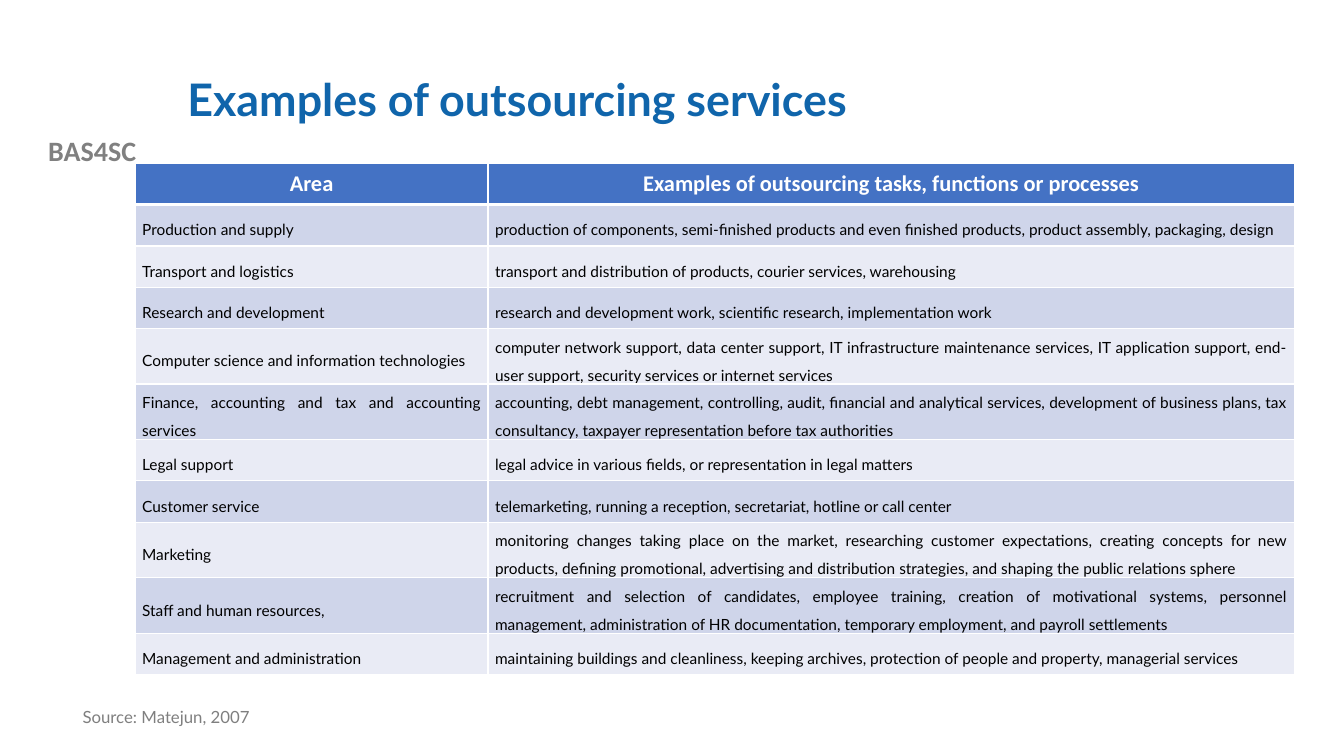
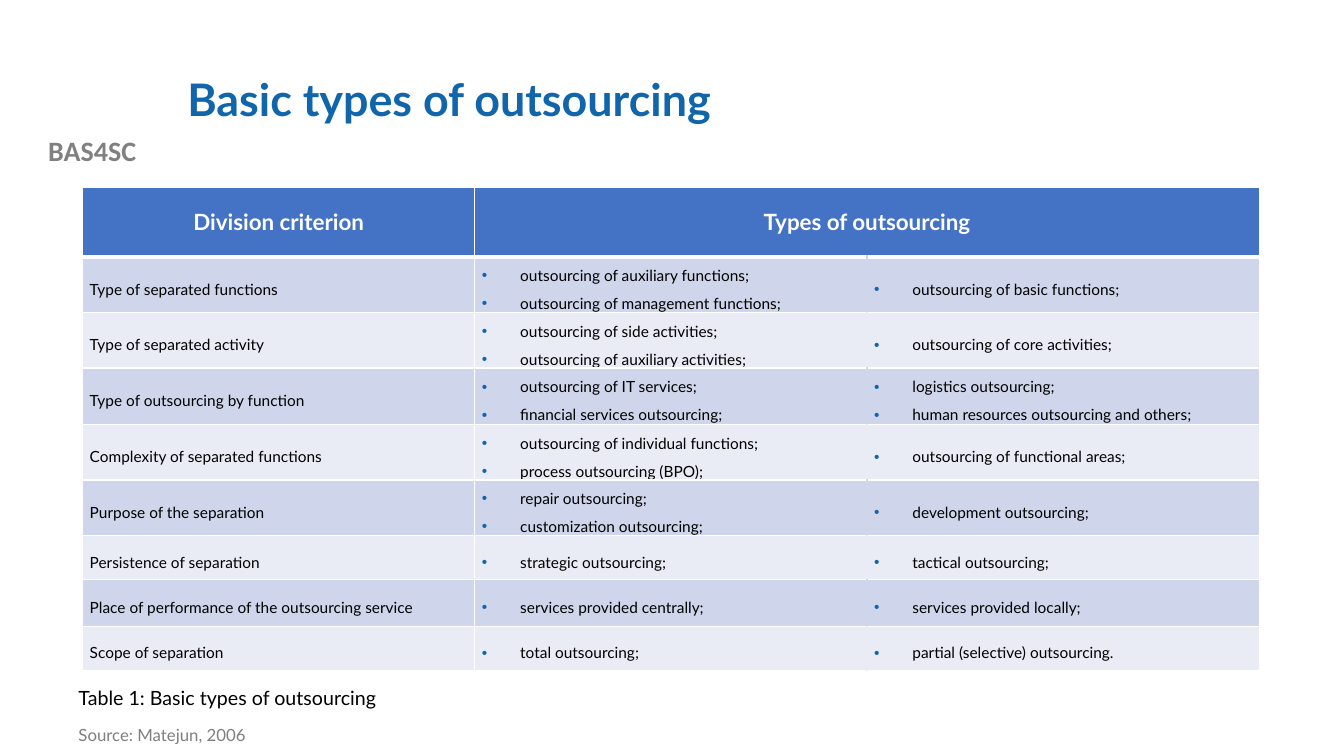
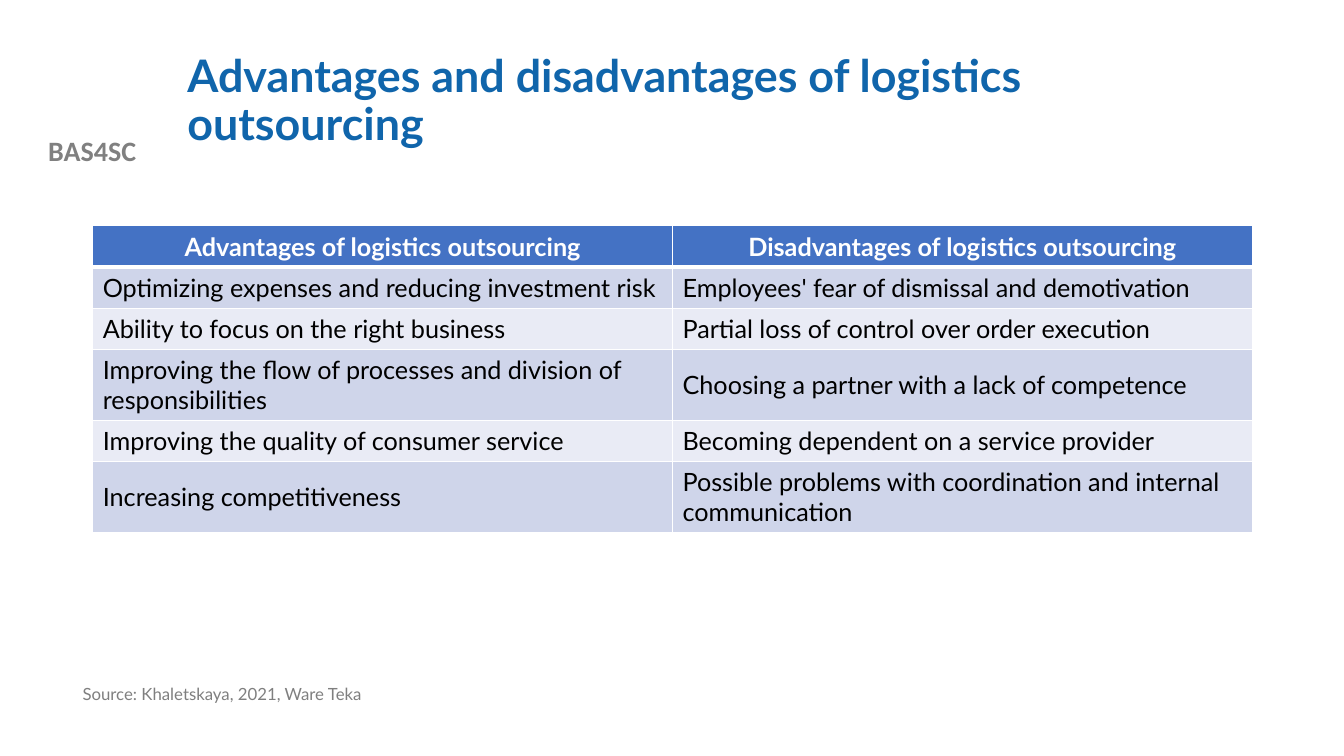
from lxml.etree import SubElement
from pptx import Presentation
from pptx.dml.color import RGBColor
from pptx.enum.text import MSO_ANCHOR, PP_ALIGN
from pptx.oxml.ns import qn
from pptx.util import Inches, Pt

COLORS = {
    "title": "1065AB",
    "label": "808080",
    "source": "7F7F7F",
    "header": "4472C4",
    "odd_row": "CFD5EA",
    "even_row": "E9EBF5",
    "white": "FFFFFF",
    "black": "000000",
}
FONT = "Lato"
LABEL_FONT = "Calibri"
BULLET_INDENT = Inches(0.38)

SERVICES = [
    ["Area", "Examples of outsourcing tasks, functions or processes"],
    ["Production and supply",
     "production of components, semi-finished products and even finished products, product assembly, "
     "packaging, design"],
    ["Transport and logistics", "transport and distribution of products, courier services, warehousing"],
    ["Research and development", "research and development work, scientific research, implementation work"],
    ["Computer science and information technologies",
     "computer network support, data center support, IT infrastructure maintenance services, "
     "IT application support, end-user support, security services or internet services"],
    ["Finance, accounting and tax and accounting services",
     "accounting, debt management, controlling, audit, financial and analytical services, development of "
     "business plans, tax consultancy, taxpayer representation before tax authorities"],
    ["Legal support", "legal advice in various fields, or representation in legal matters"],
    ["Customer service", "telemarketing, running a reception, secretariat, hotline or call center"],
    ["Marketing",
     "monitoring changes taking place on the market, researching customer expectations, creating concepts "
     "for new products, defining promotional, advertising and distribution strategies, and shaping the "
     "public relations sphere"],
    ["Staff and human resources,",
     "recruitment and selection of candidates, employee training, creation of motivational systems, "
     "personnel management, administration of HR documentation, temporary employment, and payroll settlements"],
    ["Management and administration",
     "maintaining buildings and cleanliness, keeping archives, protection of people and property, "
     "managerial services"],
]

TYPES = [
    ["Division criterion", "Types of outsourcing", ""],
    ["Type of separated functions",
     "outsourcing of auxiliary functions;\noutsourcing of management functions;",
     "outsourcing of basic functions;"],
    ["Type of separated activity",
     "outsourcing of side activities;\noutsourcing of auxiliary activities;",
     "outsourcing of core activities;"],
    ["Type of outsourcing by function",
     "outsourcing of IT services;\nfinancial services outsourcing;",
     "logistics outsourcing;\nhuman resources outsourcing and others;"],
    ["Complexity of separated functions",
     "outsourcing of individual functions;\nprocess outsourcing (BPO);",
     "outsourcing of functional areas;"],
    ["Purpose of the separation",
     "repair outsourcing;\ncustomization outsourcing;",
     "development outsourcing;"],
    ["Persistence of separation", "strategic outsourcing;", "tactical outsourcing;"],
    ["Place of performance of the outsourcing service",
     "services provided centrally;", "services provided locally;"],
    ["Scope of separation", "total outsourcing;", "partial (selective) outsourcing."],
]

ADVANTAGES = [
    ["Advantages of logistics outsourcing", "Disadvantages of logistics outsourcing"],
    ["Optimizing expenses and reducing investment risk", "Employees' fear of dismissal and demotivation"],
    ["Ability to focus on the right business", "Partial loss of control over order execution"],
    ["Improving the flow of processes and division of responsibilities",
     "Choosing a partner with a lack of competence"],
    ["Improving the quality of consumer service", "Becoming dependent on a service provider"],
    ["Increasing competitiveness", "Possible problems with coordination and internal communication"],
]


def add_run(paragraph, text, size, color, font=FONT, bold=False):
    run = paragraph.add_run()
    run.text = text
    run.font.size = Pt(size)
    run.font.name = font
    run.font.bold = bold
    run.font.color.rgb = RGBColor.from_string(COLORS[color])


def add_text(slide, box, text, size, color, font=FONT, bold=False,
             align=PP_ALIGN.LEFT, anchor=MSO_ANCHOR.TOP, spacing=None):
    shape = slide.shapes.add_textbox(*map(Inches, box))
    frame = shape.text_frame
    frame.word_wrap = True
    frame.vertical_anchor = anchor
    paragraph = frame.paragraphs[0]
    paragraph.alignment = align
    paragraph.line_spacing = spacing
    add_run(paragraph, text, size, color, font, bold)


def add_slide(presentation, title, source, source_box):
    slide = presentation.slides.add_slide(presentation.slide_layouts[6])
    add_text(slide, (0, 1.28, 1.83, 0.44), "BAS4SC", 20, "label", LABEL_FONT, True, PP_ALIGN.CENTER)
    add_text(slide, (1.76, 0.4, 10.66, 1.22), title, 32, "title", bold=True,
             anchor=MSO_ANCHOR.MIDDLE, spacing=0.9)
    add_text(slide, source_box, source, 12, "source", spacing=0.9)
    return slide


def set_borders(cell, borders):
    properties = cell._tc.get_or_add_tcPr()
    for side in "LRTB":
        color, width = borders.get(side, ("white", 1))
        line = SubElement(properties, qn("a:ln" + side), w=str(Pt(width)))
        fill = SubElement(line, qn("a:solidFill"))
        SubElement(fill, qn("a:srgbClr"), val=COLORS[color])


def add_bullet(paragraph):
    properties = paragraph._p.get_or_add_pPr()
    properties.set("marL", str(BULLET_INDENT))
    properties.set("indent", str(-BULLET_INDENT))
    color = SubElement(properties, qn("a:buClr"))
    SubElement(color, qn("a:srgbClr"), val=COLORS["title"])
    SubElement(properties, qn("a:buFont"), typeface="Arial")
    SubElement(properties, qn("a:buChar"), char="•")


def fill_header_cell(cell, text, size, font):
    paragraph = cell.text_frame.paragraphs[0]
    paragraph.alignment = PP_ALIGN.CENTER
    add_run(paragraph, text, size, "white", font, True)


def fill_body_cell(cell, text, size, dense, bulleted):
    if dense:
        cell.margin_left = cell.margin_right = Inches(0.07)
        cell.margin_top = cell.margin_bottom = 0
    frame = cell.text_frame
    for index, line in enumerate(text.split("\n")):
        paragraph = frame.add_paragraph() if index else frame.paragraphs[0]
        if bulleted:
            add_bullet(paragraph)
        if dense:
            paragraph.alignment = PP_ALIGN.JUSTIFY
            paragraph.line_spacing = 1.5
        add_run(paragraph, line, size, "black")
    if dense:
        paragraph.space_after = Pt(6)


def add_grid(slide, left, top, widths, heights, rows, header_size, body_size,
             header_font=FONT, dense=True, bullet_columns=()):
    box = map(Inches, (left, top, sum(widths), sum(heights)))
    table = slide.shapes.add_table(len(rows), len(widths), *box).table
    for column, width in zip(table.columns, widths):
        column.width = Inches(width)
    for row, height in zip(table.rows, heights):
        row.height = Inches(height)
    if bullet_columns:
        table.cell(0, bullet_columns[0]).merge(table.cell(0, bullet_columns[-1]))
    for row_index, row in enumerate(rows):
        fill = "header" if row_index == 0 else "odd_row" if row_index % 2 else "even_row"
        for column_index, text in enumerate(row):
            cell = table.cell(row_index, column_index)
            borders = {}
            if row_index == 0:
                borders["B"] = ("white", 3)
            elif column_index in bullet_columns:
                seam = "R" if column_index == bullet_columns[0] else "L"
                borders[seam] = (fill, 1)
            if row_index == 1:
                borders["T"] = ("white", 3)
            set_borders(cell, borders)
            cell.fill.solid()
            cell.fill.fore_color.rgb = RGBColor.from_string(COLORS[fill])
            cell.vertical_anchor = MSO_ANCHOR.MIDDLE
            if cell.is_spanned:
                continue
            if row_index == 0:
                fill_header_cell(cell, text, header_size, header_font)
            else:
                fill_body_cell(cell, text, body_size, dense, column_index in bullet_columns)


def add_services_slide(presentation):
    slide = add_slide(presentation, "Examples of outsourcing services",
                      "Source: Matejun, 2007", (0.72, 6.98, 5.01, 0.52))
    add_grid(slide, 1.34, 1.62, [3.5, 8], [0.41] * len(SERVICES), SERVICES, 16, 11, LABEL_FONT)


def add_types_slide(presentation):
    slide = add_slide(presentation, "Basic types of outsourcing",
                      "Source: Matejun, 2006", (0.68, 7.16, 5.01, 0.34))
    heights = [0.69, 0.46, 0.46, 0.56, 0.46, 0.46, 0.44, 0.46, 0.44]
    add_grid(slide, 0.82, 1.86, [3.89] * 3, heights, TYPES, 16, 11, bullet_columns=(1, 2))
    add_text(slide, (0.68, 6.76, 4.39, 0.34), "Table 1: Basic types of outsourcing", 14, "black")


def add_advantages_slide(presentation):
    slide = add_slide(presentation, "Advantages and disadvantages of logistics outsourcing",
                      "Source: Khaletskaya, 2021, Ware Teka", (0.72, 6.76, 5.01, 0.52))
    add_grid(slide, 0.92, 2.24, [5.75] * 2, [0.41] * len(ADVANTAGES), ADVANTAGES, 18, 18, dense=False)


def main():
    presentation = Presentation()
    presentation.slide_width = Inches(13.33)
    presentation.slide_height = Inches(7.5)
    add_services_slide(presentation)
    add_types_slide(presentation)
    add_advantages_slide(presentation)
    presentation.save("out.pptx")


if __name__ == "__main__":
    main()
